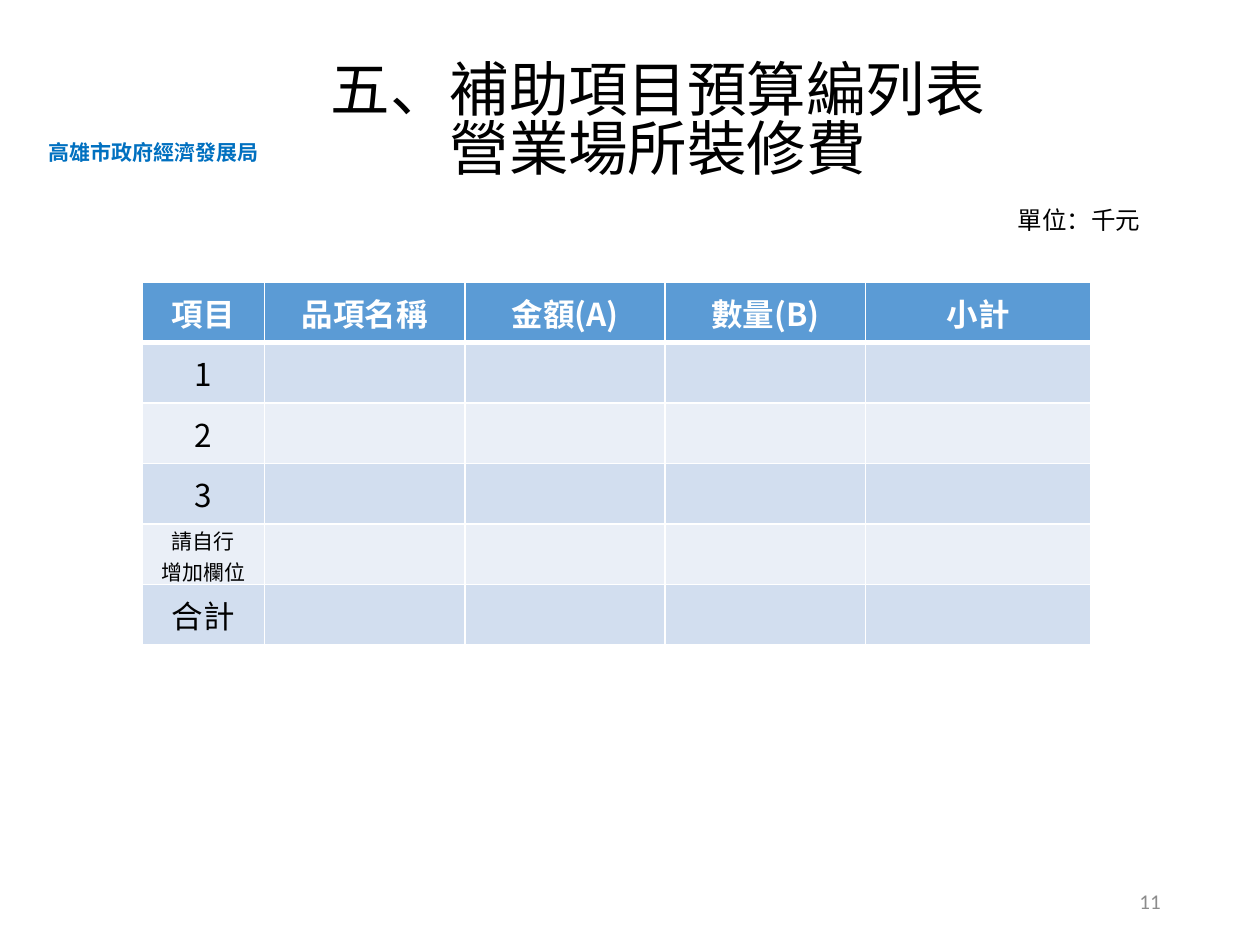
from dataclasses import dataclass

import pptx
import pptx.dml.color
import pptx.enum.text
import pptx.oxml
import pptx.oxml.ns
import pptx.util
from pptx.util import Inches

ALIGN = pptx.enum.text.PP_ALIGN
ANCHOR = pptx.enum.text.MSO_ANCHOR


@dataclass(frozen=True)
class Theme:
    cjk_font: str = "Noto Sans CJK SC"
    number_font: str = "Calibri"
    title_size: int = 34
    table_size: int = 18
    unit_size: int = 14
    small_size: int = 12
    black: str = "000000"
    white: str = "FFFFFF"
    agency_blue: str = "0070C0"
    gray: str = "8C8C8C"
    header_fill: str = "5B9BD5"
    band_fills: tuple = ("D2DEEF", "EAEFF7")


THEME = Theme()
HEADERS = ["項目", "品項名稱", "金額(A)", "數量(B)", "小計"]
ROW_LABELS = [["1"], ["2"], ["3"], ["請自行", "增加欄位"], ["合計"]]
COLUMN_WIDTHS = [0.97, 1.59, 1.59, 1.59, 1.79]
ROW_HEIGHT = 0.48


def rgb(color):
    return pptx.dml.color.RGBColor.from_string(color)


def write_lines(text_frame, lines, size, color, font_name=THEME.cjk_font,
                bold=False, align=ALIGN.LEFT, spacing=None):
    """Write each line as its own paragraph with one run."""
    for index, line in enumerate(lines):
        paragraph = text_frame.add_paragraph() if index else text_frame.paragraphs[0]
        paragraph.alignment = align
        if spacing:
            paragraph.line_spacing = spacing
        run = paragraph.add_run()
        run.text = line
        run.font.name = font_name
        run.font.size = pptx.util.Pt(size)
        run.font.bold = bold
        run.font.color.rgb = rgb(color)
        east_asian = pptx.oxml.parse_xml(
            f'<a:ea {pptx.oxml.ns.nsdecls("a")} typeface="{font_name}"/>')
        run.font._element.find(pptx.oxml.ns.qn("a:latin")).addnext(east_asian)


def add_text(slide, box, lines, size, color, anchor=ANCHOR.TOP, wrap=True, **style):
    shape = slide.shapes.add_textbox(*map(Inches, box))
    shape.text_frame.word_wrap = wrap
    shape.text_frame.vertical_anchor = anchor
    write_lines(shape.text_frame, lines, size, color, **style)


def set_borders(cell, bottom_width=1):
    """Draw white 1 pt borders, with a bottom border of the given width."""
    widths = {"lnL": 1, "lnR": 1, "lnT": 1, "lnB": bottom_width}
    properties = cell._tc.get_or_add_tcPr()
    for index, (side, width) in enumerate(widths.items()):
        line = pptx.oxml.parse_xml(
            f'<a:{side} {pptx.oxml.ns.nsdecls("a")} w="{pptx.util.Pt(width)}">'
            f'<a:solidFill><a:srgbClr val="{THEME.white}"/></a:solidFill></a:{side}>')
        properties.insert(index, line)


def style_cell(cell, fill, bottom_width=1):
    cell.fill.solid()
    cell.fill.fore_color.rgb = rgb(fill)
    cell.vertical_anchor = ANCHOR.MIDDLE
    set_borders(cell, bottom_width)


def add_budget_table(slide, left, top):
    row_count = len(ROW_LABELS) + 1
    table = slide.shapes.add_table(
        row_count, len(HEADERS), Inches(left), Inches(top),
        Inches(sum(COLUMN_WIDTHS)), Inches(ROW_HEIGHT * row_count)).table
    for column, width in zip(table.columns, COLUMN_WIDTHS):
        column.width = Inches(width)
    for row in table.rows:
        row.height = Inches(ROW_HEIGHT)

    for column_index, header in enumerate(HEADERS):
        cell = table.cell(0, column_index)
        style_cell(cell, THEME.header_fill, bottom_width=3)
        write_lines(cell.text_frame, [header], THEME.table_size, THEME.white,
                    bold=True, align=ALIGN.CENTER)

    for row_index, label in enumerate(ROW_LABELS, start=1):
        for column_index in range(len(HEADERS)):
            style_cell(table.cell(row_index, column_index),
                       THEME.band_fills[(row_index - 1) % 2])
        label_cell = table.cell(row_index, 0)
        two_lines = len(label) > 1
        if two_lines:
            label_cell.margin_top = label_cell.margin_bottom = Inches(0.01)
        write_lines(label_cell.text_frame, label,
                    THEME.small_size if two_lines else THEME.table_size,
                    THEME.black, align=ALIGN.CENTER)


def main():
    presentation = pptx.Presentation()
    presentation.slide_width = Inches(10)
    presentation.slide_height = Inches(7.5)
    slide = presentation.slides.add_slide(presentation.slide_layouts[6])

    add_text(slide, (0.29, 1.06, 1.88, 0.3), ["高雄市政府經濟發展局"],
             THEME.small_size, THEME.agency_blue, wrap=False, bold=True)
    add_budget_table(slide, 1.13, 2.24)
    add_text(slide, (0.72, 0.47, 9, 1.01), ["五、補助項目預算編列表", "營業場所裝修費"],
             THEME.title_size, THEME.black, anchor=ANCHOR.MIDDLE,
             align=ALIGN.CENTER, spacing=0.83)
    add_text(slide, (7.98, 1.58, 2, 0.34), ["單位：千元"],
             THEME.unit_size, THEME.black)
    add_text(slide, (7.06, 6.95, 2.25, 0.4), ["11"], THEME.small_size, THEME.gray,
             anchor=ANCHOR.MIDDLE, font_name=THEME.number_font, align=ALIGN.RIGHT)

    presentation.save("out.pptx")


if __name__ == "__main__":
    main()
